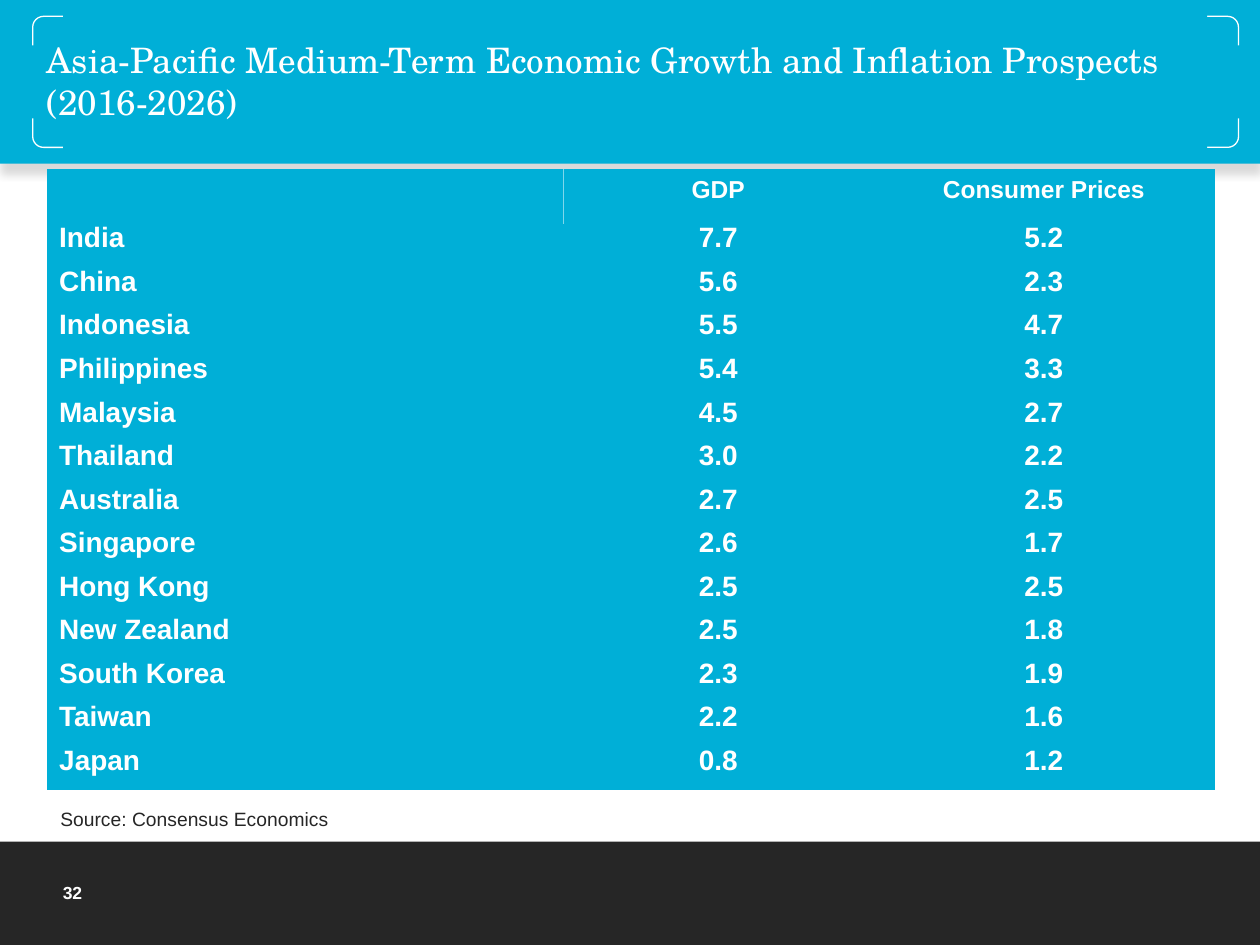
from lxml.etree import SubElement
from pptx import Presentation
from pptx.dml.color import RGBColor
from pptx.enum.shapes import MSO_SHAPE as Preset
from pptx.enum.text import MSO_ANCHOR as Anchor, PP_ALIGN as Align
from pptx.oxml import parse_xml
from pptx.oxml.ns import nsdecls, qn
from pptx.util import Inches, Pt

BLUE = RGBColor(0x00, 0xAF, 0xD7)
PALE_BLUE = RGBColor(0x7F, 0xD7, 0xEB)
CHARCOAL = RGBColor(0x26, 0x26, 0x26)
WHITE = RGBColor(0xFF, 0xFF, 0xFF)

WIDTH, HEIGHT = 10, 7.5
HEADER_HEIGHT, FOOTER_TOP = 1.3, 6.68
TABLE_LEFT, TABLE_TOP, TABLE_HEIGHT = 0.37, 1.34, 4.93
COLUMN_WIDTHS = [4.1, 2.46, 2.71]
HEADING_HEIGHT = 0.44
NO_STYLE = "{2D5ABB26-0587-4C30-8999-92F81FD0307C}"

HEADINGS = ["", "GDP", "Consumer Prices"]
PROSPECTS = [
    ("India", "7.7", "5.2"),
    ("China", "5.6", "2.3"),
    ("Indonesia", "5.5", "4.7"),
    ("Philippines", "5.4", "3.3"),
    ("Malaysia", "4.5", "2.7"),
    ("Thailand", "3.0", "2.2"),
    ("Australia", "2.7", "2.5"),
    ("Singapore", "2.6", "1.7"),
    ("Hong Kong", "2.5", "2.5"),
    ("New Zealand", "2.5", "1.8"),
    ("South Korea", "2.3", "1.9"),
    ("Taiwan", "2.2", "1.6"),
    ("Japan", "0.8", "1.2"),
]


def write(frame, text, size, color=WHITE, font="Arial", bold=False,
          align=Align.LEFT, spacing=1.0):
    paragraph = frame.paragraphs[0]
    paragraph.alignment = align
    paragraph.line_spacing = spacing
    run = paragraph.add_run()
    run.text = text
    run.font.size = Pt(size)
    run.font.name = font
    run.font.bold = bold
    run.font.color.rgb = color


def add_block(slide, box, fill, preset=Preset.RECTANGLE, line=None):
    shape = slide.shapes.add_shape(preset, *map(Inches, box))
    shape.shadow.inherit = False
    shape.fill.solid()
    shape.fill.fore_color.rgb = fill
    if line is None:
        shape.line.fill.background()
    else:
        shape.line.color.rgb = line
        shape.line.width = Pt(0.75)
    return shape


def add_text(slide, box, text, size, anchor=Anchor.TOP, **style):
    frame = slide.shapes.add_textbox(*map(Inches, box)).text_frame
    frame.word_wrap = True
    frame.vertical_anchor = anchor
    write(frame, text, size, **style)


def cast_shadow(shape):
    effects = shape.element.spPr.find(qn("a:effectLst"))
    effects.append(parse_xml(
        f'<a:outerShdw {nsdecls("a")} blurRad="{Pt(5)}" dist="{Pt(5)}" dir="5400000" '
        'algn="t" rotWithShape="0"><a:srgbClr val="000000"><a:alpha val="15000"/>'
        '</a:srgbClr></a:outerShdw>'))


def add_right_border(cell, color, width):
    properties = cell._tc.get_or_add_tcPr()
    line = parse_xml(
        f'<a:lnR {nsdecls("a")} w="{Pt(width)}"><a:solidFill>'
        f'<a:srgbClr val="{color}"/></a:solidFill></a:lnR>')
    properties.insert(0, line)


def add_header(slide):
    cast_shadow(add_block(slide, (0, 0, WIDTH, HEADER_HEIGHT), BLUE))
    frame = add_block(slide, (0.26, 0.13, 9.57, 1.04), BLUE,
                      Preset.ROUNDED_RECTANGLE, WHITE)
    frame.adjustments[0] = 0.083
    for box in [(0.15, 0.36, 9.75, 0.58), (0.5, 0.06, 9.08, 1.18)]:
        add_block(slide, box, BLUE)


def set_title(slide, box, text):
    title = slide.shapes.title
    slide.shapes.element.append(title.element)
    title.left, title.top, title.width, title.height = map(Inches, box)
    title.text_frame.word_wrap = True
    title.text_frame.vertical_anchor = Anchor.MIDDLE
    write(title.text_frame, text, 20, font="TeX Gyre Schola")


def add_prospects(slide):
    rows = [HEADINGS, *PROSPECTS]
    table = slide.shapes.add_table(
        len(rows), len(HEADINGS), Inches(TABLE_LEFT), Inches(TABLE_TOP),
        Inches(sum(COLUMN_WIDTHS)), Inches(TABLE_HEIGHT)).table
    table.horz_banding = False
    properties = table._tbl.tblPr
    style = properties.find(qn("a:tableStyleId"))
    if style is None:
        style = SubElement(properties, qn("a:tableStyleId"))
    style.text = NO_STYLE
    for column, width in zip(table.columns, COLUMN_WIDTHS):
        column.width = Inches(width)
    row_height = (TABLE_HEIGHT - HEADING_HEIGHT) / len(PROSPECTS)
    for r, values in enumerate(rows):
        table.rows[r].height = Inches(row_height if r else HEADING_HEIGHT)
        size, spacing = (16, 0.7) if r else (14, 1.05)
        for c, value in enumerate(values):
            cell = table.cell(r, c)
            cell.fill.solid()
            cell.fill.fore_color.rgb = BLUE
            if value:
                write(cell.text_frame, value, size, bold=True, spacing=spacing,
                      align=Align.CENTER if c else Align.LEFT)
    add_right_border(table.cell(0, 0), PALE_BLUE, 0.5)


def main():
    presentation = Presentation()
    presentation.slide_width = Inches(WIDTH)
    presentation.slide_height = Inches(HEIGHT)
    slide = presentation.slides.add_slide(presentation.slide_layouts[5])
    add_block(slide, (0, FOOTER_TOP, WIDTH, HEIGHT - FOOTER_TOP), CHARCOAL)
    add_header(slide)
    add_text(slide, (0.4, 6.95, 1.16, 0.27), "32", 10, Anchor.MIDDLE, bold=True)
    set_title(slide, (0.27, 0.25, 9.09, 0.77),
              "Asia-Pacific Medium-Term Economic Growth and Inflation Prospects (2016-2026)")
    add_prospects(slide)
    add_text(slide, (0.38, 6.36, 2.82, 0.29), "Source: Consensus Economics", 11,
             color=CHARCOAL)
    presentation.save("out.pptx")


if __name__ == "__main__":
    main()
